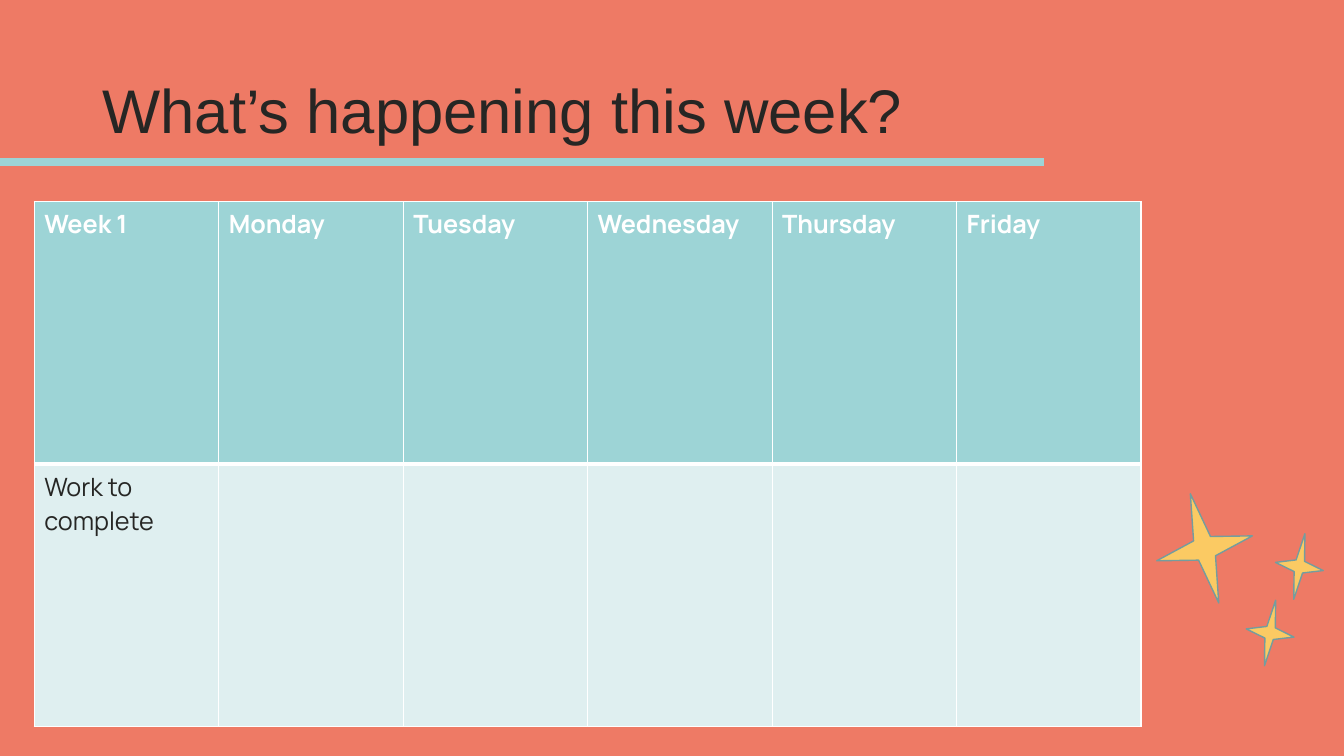
"""Build a weekly planner slide with a timetable and three stars."""
from dataclasses import dataclass

from lxml import etree
from pptx import Presentation
from pptx import util as u
from pptx.dml.color import RGBColor
from pptx.enum import shapes, text
from pptx.oxml import ns

CORAL = RGBColor(0xEE, 0x7A, 0x65)
AQUA = RGBColor(0x9D, 0xD4, 0xD6)
PALE = RGBColor(0xDF, 0xEF, 0xF0)
GOLD = RGBColor(0xFB, 0xCA, 0x63)
TEAL = RGBColor(0x74, 0x9D, 0x9E)
INK = RGBColor(0x26, 0x26, 0x24)
WHITE = RGBColor(0xFF, 0xFF, 0xFF)


@dataclass(frozen=True)
class Star:
    left: float
    top: float
    width: float
    height: float
    turn: float


@dataclass(frozen=True)
class Row:
    words: tuple[str, ...]
    fill: RGBColor
    ink: RGBColor
    bold: bool
    edges: dict[str, float]


STARS = (
    Star(825.1, 351.4, 70.6, 80.6, 345.4),
    Star(889.9, 428.4, 34.6, 47.5, 9.7),
    Star(910.8, 380.9, 34.6, 47.5, 9.7),
)
DAYS = ("Monday", "Tuesday", "Wednesday", "Thursday", "Friday")
ROWS = (
    Row(("Week 1", *DAYS), AQUA, WHITE, True, {"L": 1, "R": 1, "T": 1, "B": 3}),
    Row(("Work to complete", *[""] * len(DAYS)), PALE, INK, False,
        {"L": 1, "R": 1, "T": 3, "B": 1}),
)


def draw_rule(slide) -> None:
    rule = slide.shapes.add_connector(
        shapes.MSO_CONNECTOR.STRAIGHT, u.Pt(0), u.Pt(115.9), u.Pt(745.9), u.Pt(115.9))
    rule.line.color.rgb = AQUA
    rule.line.width = u.Pt(6)
    etree.SubElement(rule._element.spPr, ns.qn("a:effectLst"))


def draw_star(slide, star: Star) -> None:
    shape = slide.shapes.add_shape(
        shapes.MSO_SHAPE.STAR_4_POINT, u.Pt(star.left), u.Pt(star.top),
        u.Pt(star.width), u.Pt(star.height))
    shape.rotation = star.turn
    shape.shadow.inherit = False
    shape.fill.solid()
    shape.fill.fore_color.rgb = GOLD
    shape.line.color.rgb = TEAL
    shape.line.width = u.Pt(1)


def set_title(slide, words: str) -> None:
    title = slide.shapes.title
    title.left, title.top = u.Pt(66), u.Pt(28.8)
    title.width, title.height = u.Pt(828), u.Pt(104.4)
    frame = title.text_frame
    frame.text = words
    frame.vertical_anchor = text.MSO_ANCHOR.MIDDLE
    line = frame.paragraphs[0]
    line.alignment = text.PP_ALIGN.LEFT
    line.line_spacing = 0.9
    line.font.name = "Arial"
    line.font.size = u.Pt(44)
    line.font.color.rgb = INK


def set_edge(cell, side: str, width: float) -> None:
    edge = etree.SubElement(
        cell._tc.get_or_add_tcPr(), ns.qn(f"a:ln{side}"), w=str(u.Pt(width)))
    fill = etree.SubElement(edge, ns.qn("a:solidFill"))
    etree.SubElement(fill, ns.qn("a:srgbClr"), val=str(WHITE))


def set_cell(cell, words: str, row: Row) -> None:
    for side, width in row.edges.items():
        set_edge(cell, side, width)
    cell.fill.solid()
    cell.fill.fore_color.rgb = row.fill
    cell.text = words
    font = cell.text_frame.paragraphs[0].font
    font.name = "Manrope"
    font.size = u.Pt(18)
    font.bold = row.bold
    font.color.rgb = row.ink


def draw_table(slide) -> None:
    count = len(ROWS[0].words)
    table = slide.shapes.add_table(
        len(ROWS), count, u.Pt(24.5), u.Pt(144), u.Pt(790.6), u.Pt(375.2)).table
    table.horz_banding = False
    for r, row in enumerate(ROWS):
        for c, words in enumerate(row.words):
            set_cell(table.cell(r, c), words, row)


def main() -> None:
    deck = Presentation()
    deck.slide_width, deck.slide_height = u.Pt(960), u.Pt(540)
    slide = deck.slides.add_slide(deck.slide_layouts.get_by_name("Title Only"))
    ground = slide.background.fill
    ground.solid()
    ground.fore_color.rgb = CORAL
    draw_rule(slide)
    for star in STARS:
        draw_star(slide, star)
    set_title(slide, "What’s happening this week?")
    draw_table(slide)
    deck.save("out.pptx")


if __name__ == "__main__":
    main()
